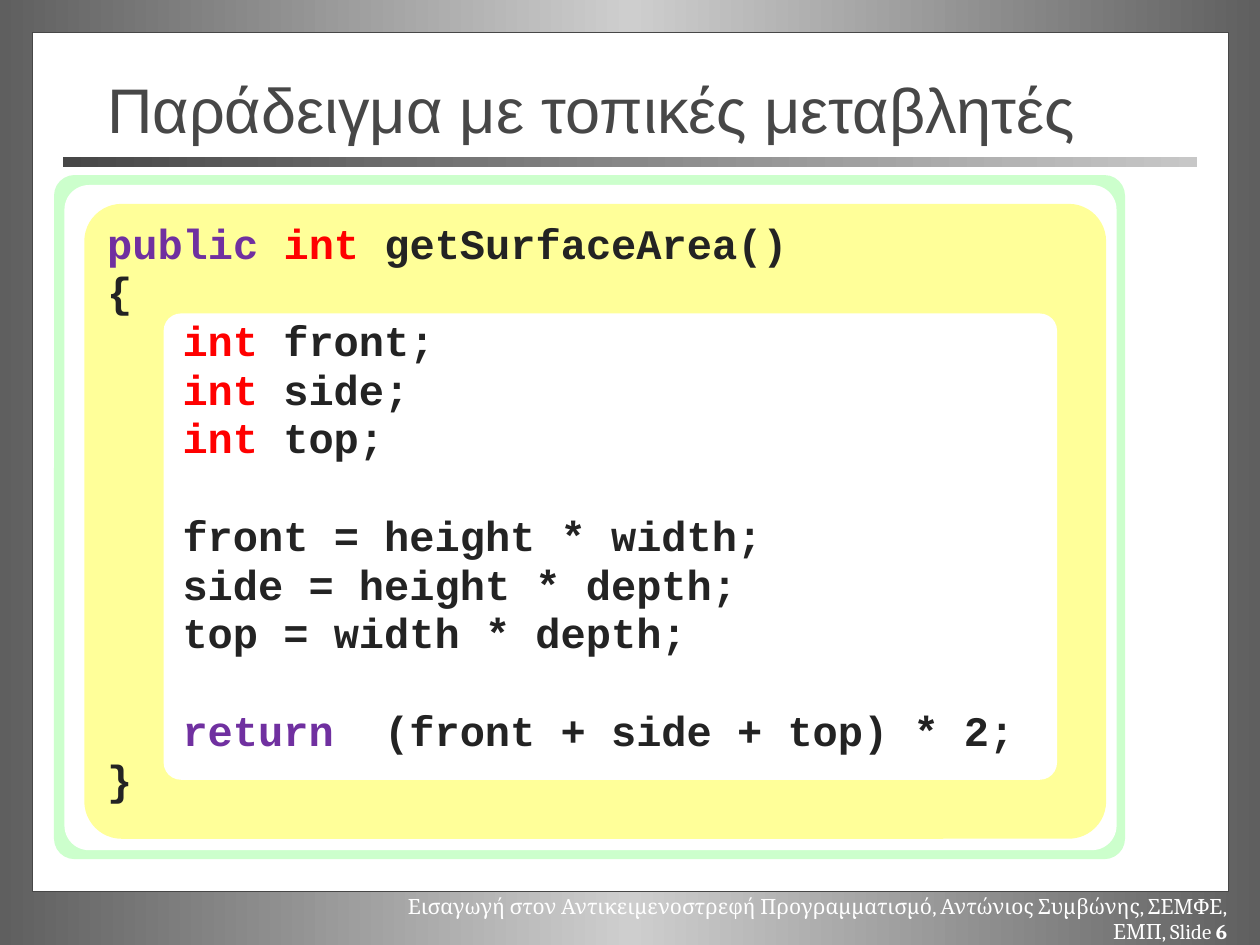
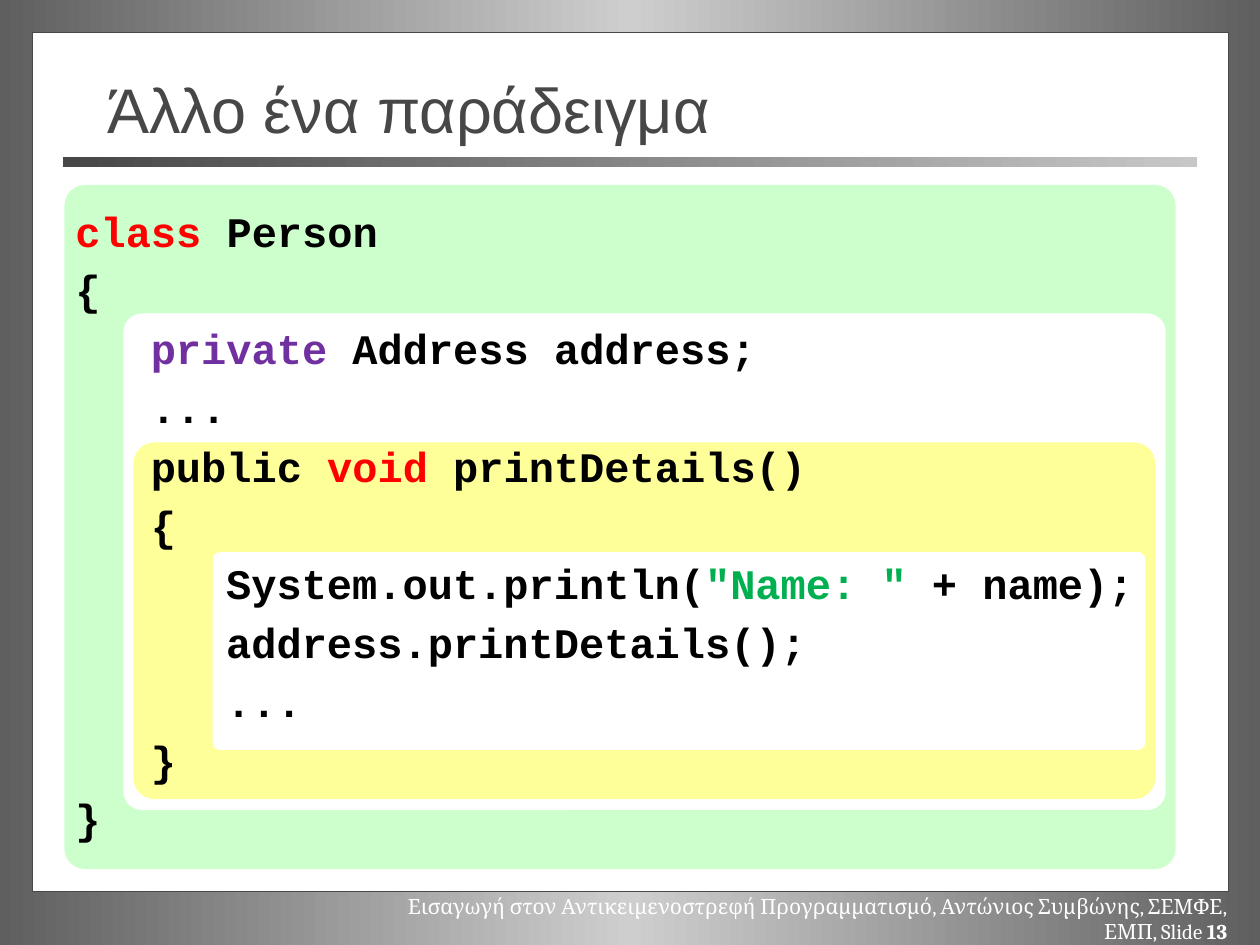
from copy import deepcopy

from pptx import Presentation
from pptx.dml.color import RGBColor
from pptx.enum.shapes import MSO_SHAPE as Shape
from pptx.enum.text import MSO_ANCHOR as Anchor, PP_ALIGN as Align
from pptx.oxml.ns import qn
from pptx.util import Cm, Pt

COLORS = {
    "edge": "5F5F5F",
    "glow": "CECECE",
    "gray": "474747",
    "silver": "C7C7C7",
    "white": "FFFFFF",
    "green": "CCFFCC",
    "yellow": "FFFF99",
    "ink": "232323",
    "black": "000000",
    "purple": "7030A0",
    "red": "FF0000",
    "string": "00B050",
}
FOOTER = (
    "Εισαγωγή στον Αντικειμενοστρεφή Προγραμματισμό, "
    "Αντώνιος Συμβώνης, ΣΕΜΦΕ, ΕΜΠ, Slide "
)
CODE_SIZE = 24
CODE_GAP = 0.2 * CODE_SIZE
INDENT = 1.52
BLANK_LINE = 27.85

SURFACE_SCOPES = [
    ("green", (1.09, 3.53, 21.59, 13.79), 0.03),
    ("white", (1.3, 3.73, 21.21, 13.41), 0.037),
    ("yellow", (1.7, 4.11, 20.6, 12.8), 0.059),
    ("white", (3.3, 6.32, 18.01, 9.4), 0.037),
]
SURFACE_CODE = [
    (0, [("public ", "purple"), ("int ", "red"), ("getSurfaceArea()", "ink")]),
    (0, [("{", "ink")]),
    (1, [("int", "red"), (" front;", "ink")]),
    (1, [("int", "red"), (" side;", "ink")]),
    (1, [("int ", "red"), ("top;", "ink")]),
    (1, [("front = height * width;", "ink")]),
    (1, [("side = height * depth;", "ink")]),
    (1, [("top = width * depth;", "ink")]),
    (1, [("return ", "purple"), (" (front + side + top) * 2;", "ink")]),
    (0, [("}", "ink")]),
]
SURFACE_BREAKS = {5, 8}

PERSON_SCOPES = [
    ("green", (1.3, 3.73, 22.4, 13.79), 0.03),
    ("white", (2.49, 6.32, 21.01, 10.01), 0.037),
    ("yellow", (2.69, 8.92, 20.6, 7.19), 0.059),
    ("white", (4.29, 11.13, 18.8, 3.99), 0.037),
]
PERSON_CODE = [
    (0, [("class", "red"), (" Person", "black")]),
    (0, [("{", "black")]),
    (1, [("private", "purple"), (" Address address;", "black")]),
    (1, [("...", "black")]),
    (1, [("public ", "black"), ("void ", "red"), ("printDetails()", "black")]),
    (1, [("{", "black")]),
    (2, [("System.out.println(", "black"), ('"Name: "', "string"), (" + name);", "black")]),
    (2, [("address.printDetails();", "black")]),
    (2, [("...", "black")]),
    (1, [("}", "black")]),
    (0, [("}", "black")]),
]


def rgb(color):
    return RGBColor.from_string(COLORS[color])


def lengths(box):
    return [Cm(value) for value in box]


def fill_gradient(fill, element, colors):
    fill.gradient()
    fill.gradient_angle = 0
    stop_list = next(element.iter(qn("a:gsLst")))
    while len(stop_list) < len(colors):
        stop_list.append(deepcopy(stop_list[0]))
    for index, (stop, color) in enumerate(zip(fill.gradient_stops, colors)):
        stop.position = index / (len(colors) - 1)
        stop.color.rgb = rgb(color)


def add_panel(slide, kind, box, color):
    panel = slide.shapes.add_shape(kind, *lengths(box))
    panel.shadow.inherit = False
    panel.fill.solid()
    panel.fill.fore_color.rgb = rgb(color)
    panel.line.fill.background()
    return panel


def add_text_area(slide, box):
    frame = slide.shapes.add_textbox(*lengths(box)).text_frame
    frame.word_wrap = True
    return frame


def add_run(paragraph, text, font, size, color, bold=False):
    run = paragraph.add_run()
    run.text = text
    run.font.name = font
    run.font.size = Pt(size)
    run.font.bold = bold
    run.font.color.rgb = rgb(color)


def add_page(prs, title, number):
    slide = prs.slides.add_slide(prs.slide_layouts[6])
    page = add_panel(slide, Shape.RECTANGLE, (0.66, 0.66, 24.1, 17.32), "white")
    page.line.color.rgb = rgb("gray")
    page.line.width = Pt(0.5)

    footer = add_text_area(slide, (7.21, 17.88, 17.78, 0.76)).paragraphs[0]
    footer.alignment = Align.RIGHT
    add_run(footer, FOOTER, "Cambria", 12, "white")
    add_run(footer, str(number), "Cambria", 12, "white", bold=True)

    rule = add_panel(slide, Shape.RECTANGLE, (1.27, 3.17, 22.86, 0.2), "gray")
    fill_gradient(rule.fill, rule.element, ["gray", "silver"])

    heading = add_text_area(slide, (1.91, 1.4, 21.59, 1.57))
    heading.vertical_anchor = Anchor.MIDDLE
    add_run(heading.paragraphs[0], title, "Arial", 36, "gray")
    return slide


def add_scopes(slide, scopes):
    for color, box, rounding in scopes:
        scope = add_panel(slide, Shape.ROUNDED_RECTANGLE, box, color)
        scope.adjustments[0] = rounding


def add_code(slide, box, lines, spacing, breaks=()):
    frame = add_text_area(slide, box)
    for index, (depth, pieces) in enumerate(lines):
        line = frame.add_paragraph() if index else frame.paragraphs[0]
        line.line_spacing = spacing
        line.space_before = Pt(CODE_GAP + BLANK_LINE * (index in breaks))
        properties = line._p.get_or_add_pPr()
        properties.set("marL", str(int(Cm(INDENT * depth))))
        properties.set("indent", "0")
        for text, color in pieces:
            add_run(line, text, "Courier New", CODE_SIZE, color, bold=True)


def main():
    prs = Presentation()
    prs.slide_width, prs.slide_height = Cm(25.4), Cm(19.05)
    master = prs.slide_master
    fill_gradient(master.background.fill, master.element, ["edge", "glow", "edge"])

    surface = add_page(prs, "Παράδειγμα με τοπικές μεταβλητές", 6)
    add_scopes(surface, SURFACE_SCOPES)
    add_code(surface, (1.91, 4.45, 21.16, 12.4), SURFACE_CODE, 0.8, SURFACE_BREAKS)

    person = add_page(prs, "Άλλο ένα παράδειγμα", 13)
    add_scopes(person, PERSON_SCOPES)
    add_code(person, (1.27, 4.01, 22.02, 13.59), PERSON_CODE, 1.0)

    prs.save("out.pptx")


if __name__ == "__main__":
    main()
